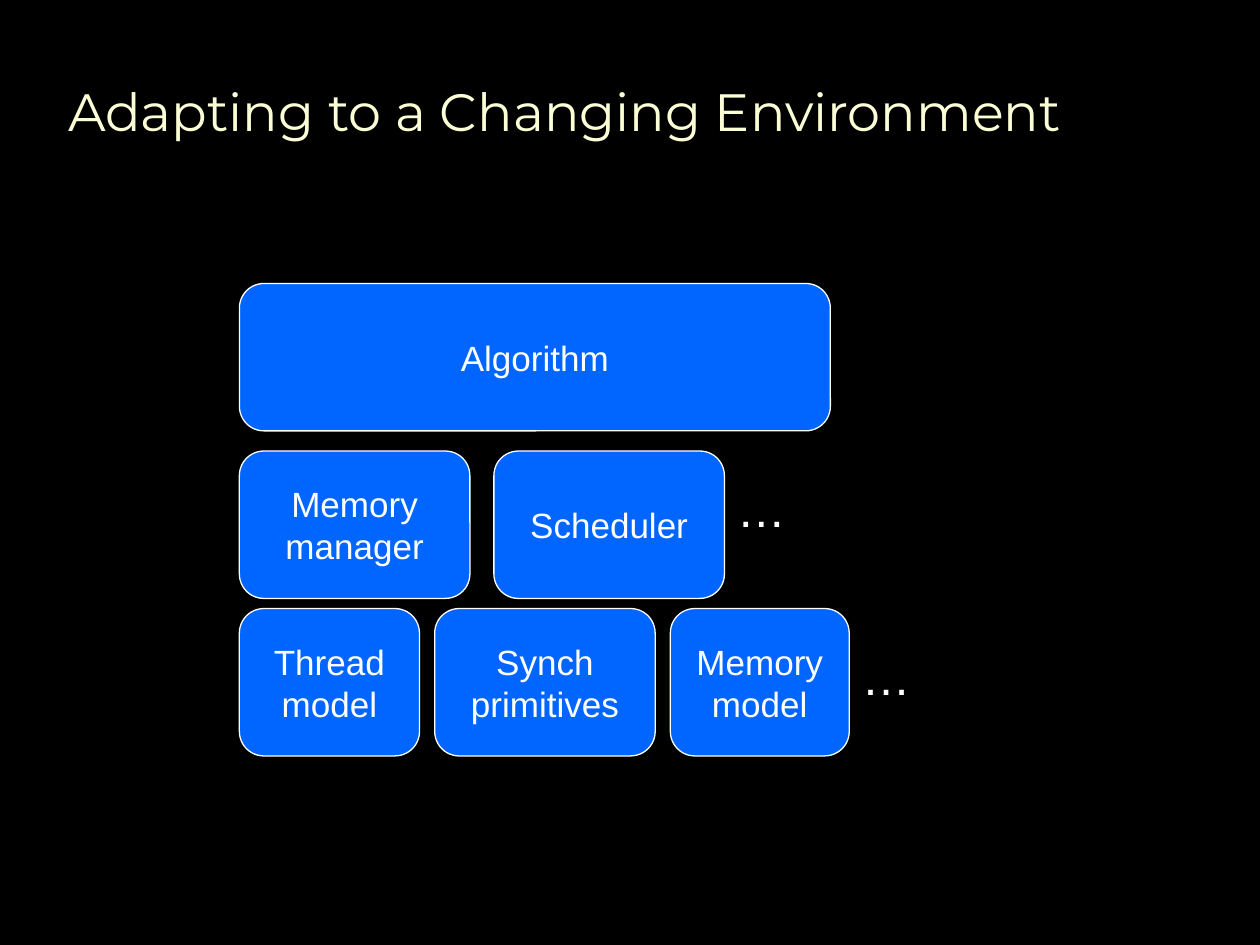
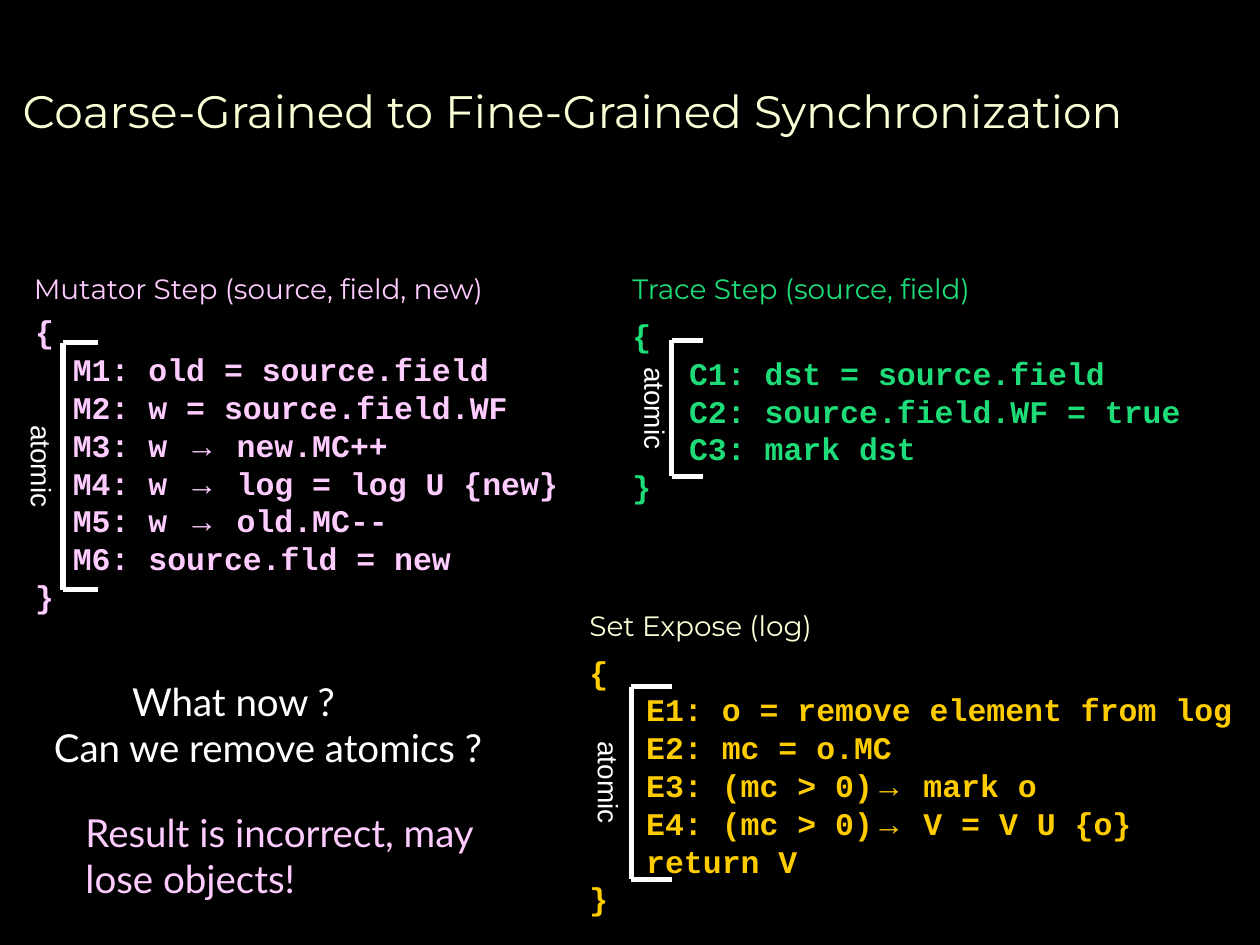
from dataclasses import dataclass

from lxml import etree
from pptx import Presentation
from pptx.dml.color import RGBColor
from pptx.enum import shapes, text
from pptx.oxml import ns
from pptx.util import Inches, Pt


@dataclass(frozen=True)
class Theme:
    background: str = "000000"
    cream: str = "FCFFD5"
    white: str = "FFFFFF"
    blue: str = "0066FF"
    pink: str = "FFCCFF"
    green: str = "1EDC78"
    amber: str = "FFCC00"
    heading_font: str = "Montserrat"
    body_font: str = "Arial"
    code_font: str = "Courier New"
    note_font: str = "Lato"
    block_size: int = 20
    ellipsis_size: int = 28
    code_size: int = 18
    label_size: int = 16
    note_size: int = 22


THEME = Theme()
ARROW = "→"


def rgb(value):
    return RGBColor.from_string(value)


def box(left, top, width, height):
    return [Inches(value) for value in (left, top, width, height)]


def add_run(paragraph, content, font, size, color, bold=False):
    run = paragraph.add_run()
    run.text = content
    run.font.name = font
    run.font.size = Pt(size)
    run.font.bold = bold
    run.font.color.rgb = rgb(color)


def paragraphs_for(frame, lines):
    for index, line in enumerate(lines):
        paragraph = frame.add_paragraph() if index else frame.paragraphs[0]
        yield paragraph, line


def indent(paragraph, inches):
    paragraph._p.get_or_add_pPr().set("marL", str(Inches(inches)))


def add_titled_slide(presentation, title, place, size):
    slide = presentation.slides.add_slide(presentation.slide_layouts[5])
    slide.background.fill.solid()
    slide.background.fill.fore_color.rgb = rgb(THEME.background)
    shape = slide.shapes.title
    shape.left, shape.top, shape.width, shape.height = box(*place)
    frame = shape.text_frame
    frame.vertical_anchor = text.MSO_ANCHOR.MIDDLE
    paragraph = frame.paragraphs[0]
    paragraph.alignment = text.PP_ALIGN.LEFT
    add_run(paragraph, title, THEME.heading_font, size, THEME.cream)
    return slide


def add_text(slide, lines, place, font, size, color, wrap=True, anchor=text.MSO_ANCHOR.TOP):
    shape = slide.shapes.add_textbox(*box(*place))
    frame = shape.text_frame
    frame.word_wrap = wrap
    frame.vertical_anchor = anchor
    for paragraph, line in paragraphs_for(frame, lines):
        add_run(paragraph, line, font, size, color)
    return shape


def add_block(slide, label, place):
    shape = slide.shapes.add_shape(shapes.MSO_SHAPE.ROUNDED_RECTANGLE, *box(*place))
    shape.shadow.inherit = False
    shape.fill.solid()
    shape.fill.fore_color.rgb = rgb(THEME.blue)
    shape.line.color.rgb = rgb(THEME.white)
    shape.line.width = Pt(0.75)
    frame = shape.text_frame
    frame.word_wrap = True
    frame.vertical_anchor = text.MSO_ANCHOR.MIDDLE
    for paragraph, line in paragraphs_for(frame, label.split("\n")):
        paragraph.alignment = text.PP_ALIGN.CENTER
        add_run(paragraph, line, THEME.body_font, THEME.block_size, THEME.white)


def add_block_row(slide, top, gap, blocks):
    left = 1.9
    for label, width in blocks:
        add_block(slide, label, (left, top, width, 1.17))
        left += width + gap


def add_code(slide, statements, place, color, statement_indent):
    shape = slide.shapes.add_textbox(*box(*place))
    frame = shape.text_frame
    frame.word_wrap = True
    for paragraph, line in paragraphs_for(frame, ["{", *statements, "}"]):
        if line not in "{}":
            indent(paragraph, statement_indent)
        for part in filter(None, line.partition(ARROW)):
            font = THEME.body_font if part == ARROW else THEME.code_font
            add_run(paragraph, part, font, THEME.code_size, color, bold=True)


def add_bracket(slide, left, top, right, bottom):
    group = slide.shapes.add_group_shape()
    corners = [(right, top), (left, top), (left, bottom), (right, bottom)]
    for start, end in zip(corners, corners[1:]):
        line = group.shapes.add_connector(
            shapes.MSO_CONNECTOR.STRAIGHT, *box(*start, *end))
        line.line.color.rgb = rgb(THEME.white)
        line.line.width = Pt(3)
        etree.SubElement(line._element.spPr, ns.qn("a:effectLst"))


def add_step(slide, heading, heading_color, heading_place, statements, code_color,
             code_place, statement_indent, bracket, atomic_at):
    add_code(slide, statements, code_place, code_color, statement_indent)
    add_text(slide, [heading], heading_place, THEME.heading_font, THEME.label_size,
             heading_color, anchor=text.MSO_ANCHOR.MIDDLE)
    add_bracket(slide, *bracket)
    atomic = add_text(slide, ["atomic"], (*atomic_at, 0.86, 0.37), THEME.body_font,
                      THEME.label_size, THEME.white, wrap=False)
    atomic.rotation = 90


def build_environment_slide(presentation):
    slide = add_titled_slide(presentation, "Adapting to a Changing Environment",
                             (0.44, 0.25, 8.89, 1.25), 30)
    add_block_row(slide, 2.25, 0, [("Algorithm", 4.69)])
    add_block_row(slide, 3.58, 0.19, [("Memory\nmanager", 1.83), ("Scheduler", 1.83)])
    add_block_row(slide, 4.83, 0.12, [("Thread model", 1.43), ("Synch primitives", 1.75),
                                      ("Memory model", 1.42)])
    for left, top in [(5.75, 3.75), (6.74, 5.08)]:
        add_text(slide, ["…"], (left, top, 0.59, 0.57), THEME.body_font,
                 THEME.ellipsis_size, THEME.white, wrap=False)


def build_synchronization_slide(presentation):
    slide = add_titled_slide(presentation, "Coarse-Grained to Fine-Grained Synchronization",
                             (0.08, 0.25, 9.82, 1.25), 26)
    add_step(slide, "Mutator Step (source, field, new)", THEME.pink, (0.17, 2, 4.67, 0.58),
             ["M1: old = source.field", "M2: w = source.field.WF", "M3: w → new.MC++",
              "M4: w → log = log U {new}", "M5: w → old.MC--", "M6: source.fld = new"],
             THEME.pink, (0.18, 2.43, 4.57, 2.5), 0.3,
             (0.5, 2.72, 0.78, 4.68), (-0.1, 3.52))
    add_step(slide, "Trace Step (source, field)", THEME.green, (4.92, 2, 3.67, 0.58),
             ["C1: dst = source.field", "C2: source.field.WF = true", "C3: mark dst"],
             THEME.green, (4.92, 2.46, 4.75, 1.6), 0.45,
             (5.33, 2.7, 5.58, 3.78), (4.77, 3.06))
    add_step(slide, "Set Expose (log)", THEME.cream, (4.58, 4.67, 2.25, 0.58),
             ["E1: o = remove element from log", "E2: mc = o.MC", "E3: (mc > 0)→ mark o",
              "E4: (mc > 0)→ V = V U {o}", "return V"],
             THEME.amber, (4.58, 5.13, 5.42, 2.2), 0.45,
             (5.01, 5.45, 5.33, 6.98), (4.4, 6.03))
    question = add_text(slide, ["What now ?", "Can we remove atomics ?"],
                        (0.33, 5.33, 4.07, 0.83), THEME.note_font, THEME.note_size, THEME.white)
    indent(question.text_frame.paragraphs[0], 0.62)
    add_text(slide, ["Result is incorrect, may lose objects!"], (0.58, 6.37, 3.42, 0.83),
             THEME.note_font, THEME.note_size, THEME.pink)


def main():
    presentation = Presentation()
    presentation.slide_width = Inches(10)
    presentation.slide_height = Inches(7.5)
    build_environment_slide(presentation)
    build_synchronization_slide(presentation)
    presentation.save("out.pptx")


if __name__ == "__main__":
    main()
